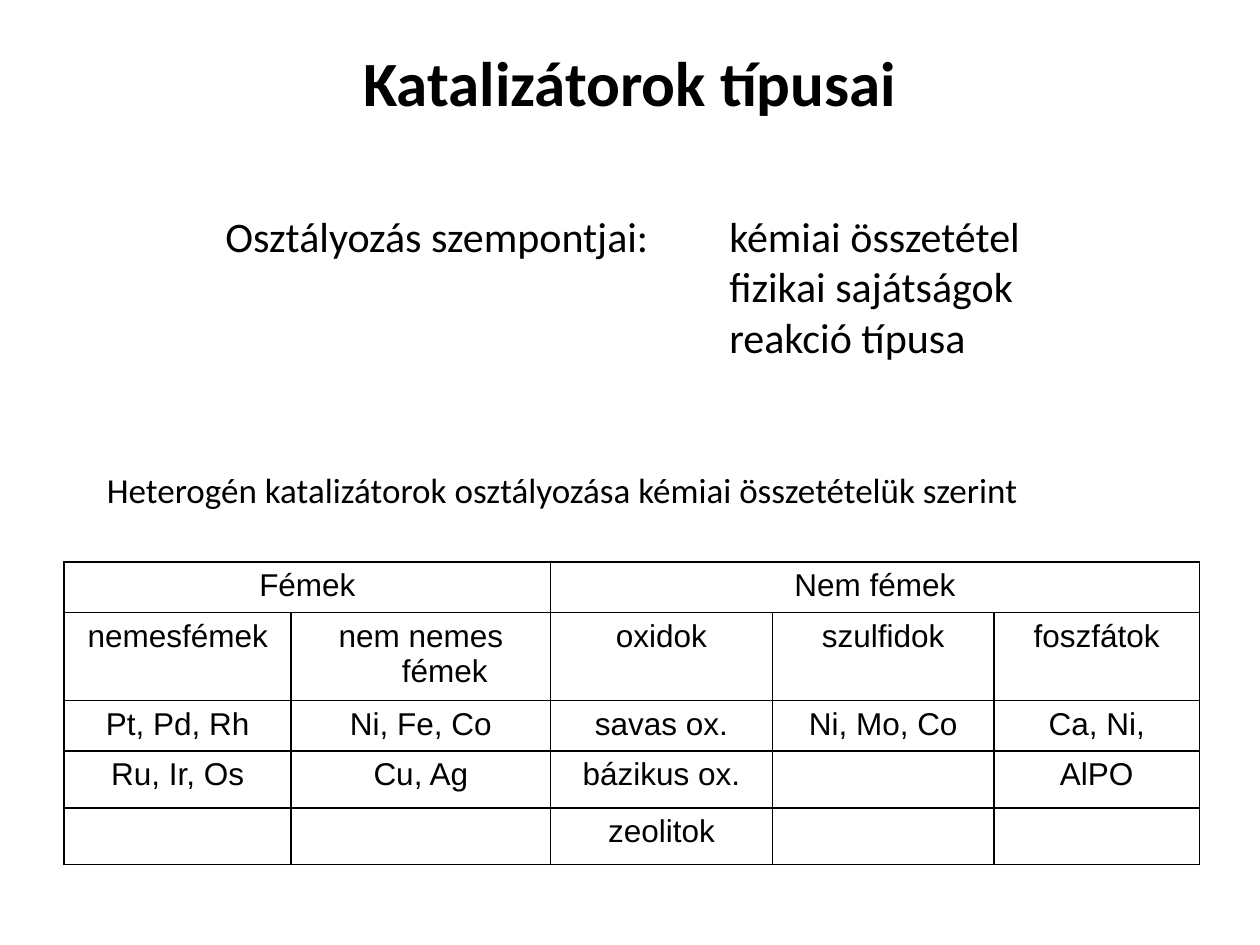
from lxml import etree
from pptx import Presentation
from pptx.dml.color import RGBColor
from pptx.enum.text import MSO_ANCHOR, PP_ALIGN
from pptx.oxml.ns import qn
from pptx.util import Inches, Pt

LEFT, CENTER = PP_ALIGN.LEFT, PP_ALIGN.CENTER
MIDDLE, TOP = MSO_ANCHOR.MIDDLE, MSO_ANCHOR.TOP
BLACK = "000000"

CRITERIA = [
    "Osztályozás szempontjai:\tkémiai összetétel",
    "\tfizikai sajátságok",
    "\treakció típusa",
]
COLUMN_WIDTHS = [1.8, 2.06, 1.76, 1.76, 1.63]
ROW_HEIGHTS = [0.4, 0.7, 0.4, 0.45, 0.45]
CATALYSTS = [
    ["Fémek", "", "Nem fémek", "", ""],
    ["nemesfémek", "nem nemes fémek", "oxidok", "szulfidok", "foszfátok"],
    ["Pt, Pd, Rh", "Ni, Fe, Co", "savas ox.", "Ni, Mo, Co", "Ca, Ni,"],
    ["Ru, Ir, Os", "Cu, Ag", "bázikus ox.", "", "AlPO"],
    ["", "", "zeolitok", "", ""],
]
HEADER_SPANS = [(0, 1), (2, 4)]


def set_font(paragraph, name, size, bold=False, color=BLACK):
    font = paragraph.font
    font.name, font.size, font.bold = name, Pt(size), bold
    font.color.rgb = RGBColor.from_string(color)


def add_tab_stop(paragraph, position):
    tabs = etree.SubElement(paragraph._p.get_or_add_pPr(), qn("a:tabLst"))
    etree.SubElement(tabs, qn("a:tab"), pos=str(position), algn="l")


def add_text(slide, box, lines, size, bold=False, align=LEFT, anchor=TOP, tab=None):
    shape = slide.shapes.add_textbox(*map(Inches, box))
    frame = shape.text_frame
    frame.word_wrap = True
    frame.vertical_anchor = anchor
    for index, line in enumerate(lines):
        paragraph = frame.add_paragraph() if index else frame.paragraphs[0]
        paragraph.text = line
        paragraph.alignment = align
        if tab:
            add_tab_stop(paragraph, Inches(tab))
        set_font(paragraph, "Calibri", size, bold)


def set_borders(cell, color=BLACK, width=1):
    properties = cell._tc.get_or_add_tcPr()
    for side in ("lnL", "lnR", "lnT", "lnB"):
        line = etree.SubElement(properties, qn(f"a:{side}"), w=str(Pt(width)))
        fill = etree.SubElement(line, qn("a:solidFill"))
        etree.SubElement(fill, qn("a:srgbClr"), val=color)


def format_cell(cell, text):
    set_borders(cell)
    cell.fill.background()
    paragraph = cell.text_frame.paragraphs[0]
    paragraph.text = text
    paragraph.alignment = CENTER
    properties = paragraph._p.get_or_add_pPr()
    hanging = Inches(0.38)
    properties.set("marL", str(hanging))
    properties.set("indent", str(-hanging))
    set_font(paragraph, "Arial", 18)


def add_catalyst_table(slide, left, top):
    frame = slide.shapes.add_table(
        len(ROW_HEIGHTS), len(COLUMN_WIDTHS), Inches(left), Inches(top),
        Inches(sum(COLUMN_WIDTHS)), Inches(sum(ROW_HEIGHTS)))
    table = frame.table
    table.first_row = table.horz_banding = False
    for column, width in zip(table.columns, COLUMN_WIDTHS):
        column.width = Inches(width)
    for row, height, texts in zip(table.rows, ROW_HEIGHTS, CATALYSTS):
        row.height = Inches(height)
        for cell, text in zip(row.cells, texts):
            format_cell(cell, text)
    for first, last in HEADER_SPANS:
        table.cell(0, first).merge(table.cell(0, last))


def main():
    presentation = Presentation()
    presentation.slide_width = Inches(10)
    presentation.slide_height = Inches(7.5)
    slide = presentation.slides.add_slide(presentation.slide_layouts[6])
    add_text(slide, (0.5, 0.3, 9, 0.69), ["Katalizátorok típusai"], 36,
             bold=True, align=CENTER, anchor=MIDDLE)
    add_text(slide, (0.75, 3.67, 8.43, 0.44),
             ["Heterogén katalizátorok osztályozása kémiai összetételük szerint"], 20)
    add_catalyst_table(slide, 0.51, 4.46)
    add_text(slide, (1.69, 1.62, 7.17, 1.31), CRITERIA, 24, tab=4)
    presentation.save("out.pptx")


if __name__ == "__main__":
    main()
